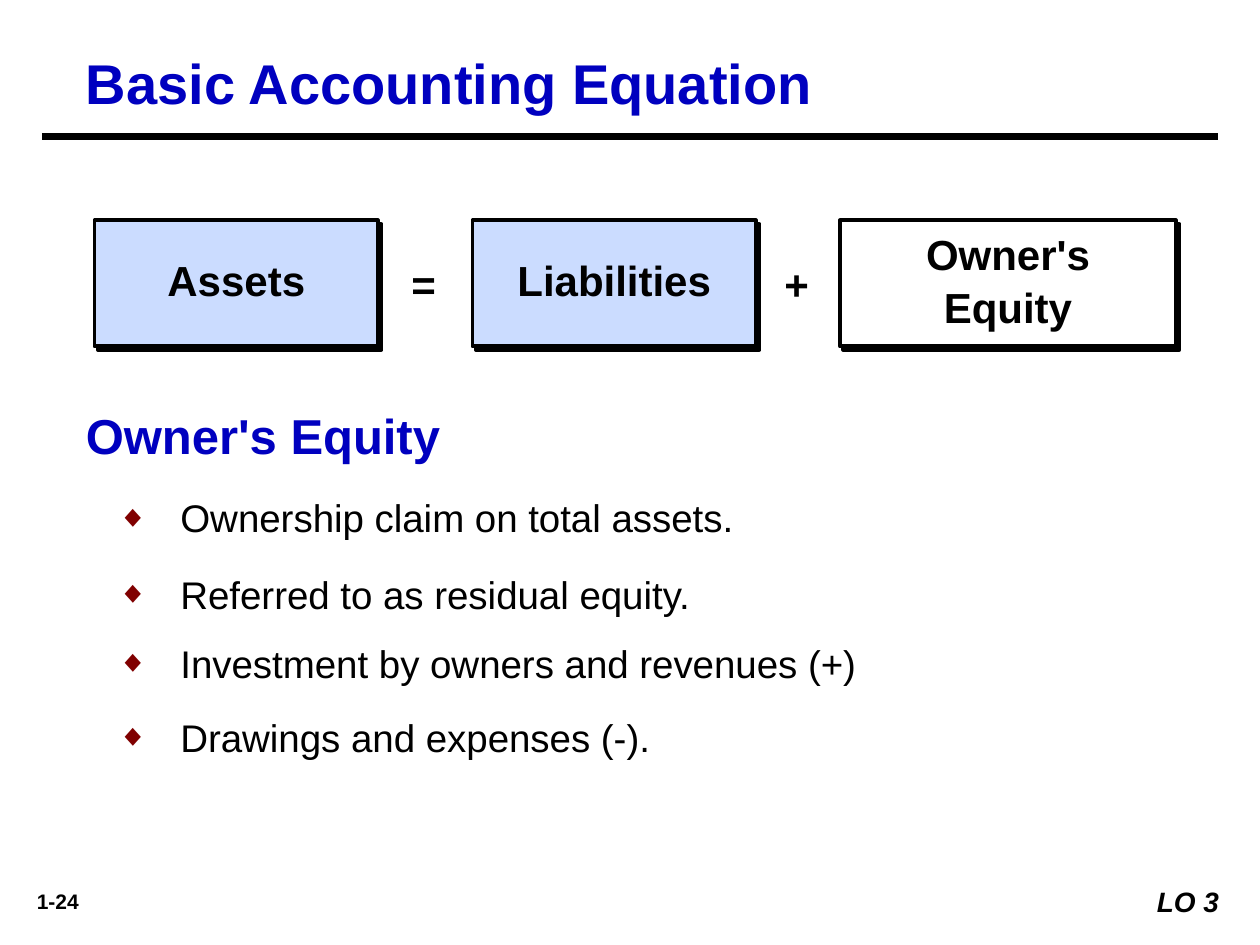
from dataclasses import dataclass

from lxml.etree import SubElement
from pptx import Presentation
from pptx.dml.color import RGBColor
from pptx.enum.shapes import MSO_CONNECTOR, MSO_SHAPE
from pptx.enum.text import MSO_ANCHOR, PP_ALIGN
from pptx.oxml.ns import qn
from pptx.util import Emu, Pt

EMU_PER_PX = 9525


@dataclass(frozen=True)
class Theme:
    font: str = "Arial"
    ink: str = "000000"
    heading: str = "0000BF"
    known_fill: str = "CBDCFF"
    paper: str = "FFFFFF"
    bullet: str = "800000"
    title_size: int = 32
    subtitle_size: int = 28
    term_size: int = 24
    body_size: int = 22
    objective_size: int = 16
    page_size: int = 12


THEME = Theme()


def px(length):
    return Emu(length * EMU_PER_PX)


def color(value):
    return RGBColor.from_string(value)


def style(paragraph, size, ink=THEME.ink, bold=True, italic=False, align=PP_ALIGN.LEFT):
    paragraph.alignment = align
    font = paragraph.font
    font.name, font.size = THEME.font, Pt(size)
    font.bold, font.italic = bold, italic
    font.color.rgb = color(ink)


def add_text(slide, box, text, size, **options):
    shape = slide.shapes.add_textbox(*map(px, box))
    shape.text_frame.word_wrap = True
    paragraph = shape.text_frame.paragraphs[0]
    paragraph.text = text
    style(paragraph, size, **options)
    return shape


def add_hard_shadow(shape):
    """Give the shape a solid, unblurred shadow to the lower right."""
    shape.shadow.inherit = False
    effects = shape._element.spPr.find(qn("a:effectLst"))
    shadow = SubElement(effects, qn("a:outerShdw"), blurRad="0", dist=str(Pt(2.8)),
                        dir="2700000", algn="ctr", rotWithShape="0")
    SubElement(shadow, qn("a:srgbClr"), val=THEME.ink)


def add_term(slide, box, text, fill):
    shape = slide.shapes.add_shape(MSO_SHAPE.RECTANGLE, *map(px, box))
    shape.fill.solid()
    shape.fill.fore_color.rgb = color(fill)
    shape.line.color.rgb = color(THEME.ink)
    shape.line.width = Pt(2.25)
    add_hard_shadow(shape)
    frame = shape.text_frame
    frame.word_wrap = True
    frame.vertical_anchor = MSO_ANCHOR.MIDDLE
    frame.margin_left = frame.margin_right = px(19)
    frame.margin_top, frame.margin_bottom = 0, px(7)
    paragraph = frame.paragraphs[0]
    paragraph.text = text
    paragraph.line_spacing = 1.05
    style(paragraph, THEME.term_size, align=PP_ALIGN.CENTER)


def add_header(slide, box, title):
    left, top, width, height = box
    add_text(slide, (left + 24, top, width - 48, 59), title,
             THEME.title_size, ink=THEME.heading)
    rule_y = px(top + height)
    rule = slide.shapes.add_connector(
        MSO_CONNECTOR.STRAIGHT, px(left), rule_y, px(left + width), rule_y)
    rule.line.color.rgb = color(THEME.ink)
    rule.line.width = Pt(4.5)
    SubElement(rule._element.spPr, qn("a:effectLst"))


def add_equation(slide, box):
    left, top, _, height = box
    terms = [
        (0, 216, "Assets", THEME.known_fill),
        (288, 216, "Liabilities", THEME.known_fill),
        (568, 256, "Owner's Equity", THEME.paper),
    ]
    for offset, width, text, fill in terms:
        add_term(slide, (left + offset, top, width, height), text, fill)
    for offset, sign, align in [(232, "=", PP_ALIGN.LEFT), (512, "+", PP_ALIGN.CENTER)]:
        add_text(slide, (left + offset, top + 24, 46, 48), sign,
                 THEME.term_size, align=align)


def add_diamond_bullet(paragraph):
    properties = paragraph._p.get_or_add_pPr()
    properties.set("marL", str(px(72)))
    properties.set("indent", str(px(-48)))
    bullet_color = SubElement(properties, qn("a:buClr"))
    SubElement(bullet_color, qn("a:srgbClr"), val=THEME.bullet)
    SubElement(properties, qn("a:buSzPct"), val="80000")
    SubElement(properties, qn("a:buFont"), typeface=THEME.font)
    SubElement(properties, qn("a:buChar"), char="◆")


def add_explanation(slide, box, heading, points):
    """Place a heading above bulleted (text, space before, space after) points."""
    left, top, width, height = box
    add_text(slide, (left, top, 424, 48), heading,
             THEME.subtitle_size, ink=THEME.heading)
    body = slide.shapes.add_textbox(*map(px, (left, top + 61, width, height - 61)))
    frame = body.text_frame
    frame.word_wrap = True
    for index, (text, before, after) in enumerate(points):
        paragraph = frame.add_paragraph() if index else frame.paragraphs[0]
        paragraph.text = text
        paragraph.level = 1
        paragraph.line_spacing = 1.2
        paragraph.space_before, paragraph.space_after = Pt(before), Pt(after)
        style(paragraph, THEME.body_size, bold=False)
        add_diamond_bullet(paragraph)


def add_footer(slide, box, page, objective):
    left, top, width, height = box
    add_text(slide, (left, top + 3, 72, 29), page,
             THEME.page_size, align=PP_ALIGN.CENTER)
    label = add_text(slide, (left + width - 80, top, 80, height), objective,
                     THEME.objective_size, italic=True, align=PP_ALIGN.RIGHT)
    label.fill.solid()
    label.fill.fore_color.rgb = color(THEME.paper)


def main():
    presentation = Presentation()
    presentation.slide_width, presentation.slide_height = px(960), px(720)
    slide = presentation.slides.add_slide(presentation.slide_layouts[6])
    add_header(slide, (32, 32, 896, 72), "Basic Accounting Equation")
    add_equation(slide, (72, 168, 824, 96))
    add_explanation(slide, (56, 304, 864, 284), "Owner's Equity", [
        ("Ownership claim on total assets.", 0, 0),
        ("Referred to as residual equity.", 12, 0),
        ("Investment by owners and revenues (+)", 8, 2.4),
        ("Drawings and expenses (-).", 8, 2.4),
    ])
    add_footer(slide, (8, 669, 936, 36), "1-24", "LO 3 ")
    presentation.save("out.pptx")


if __name__ == "__main__":
    main()
